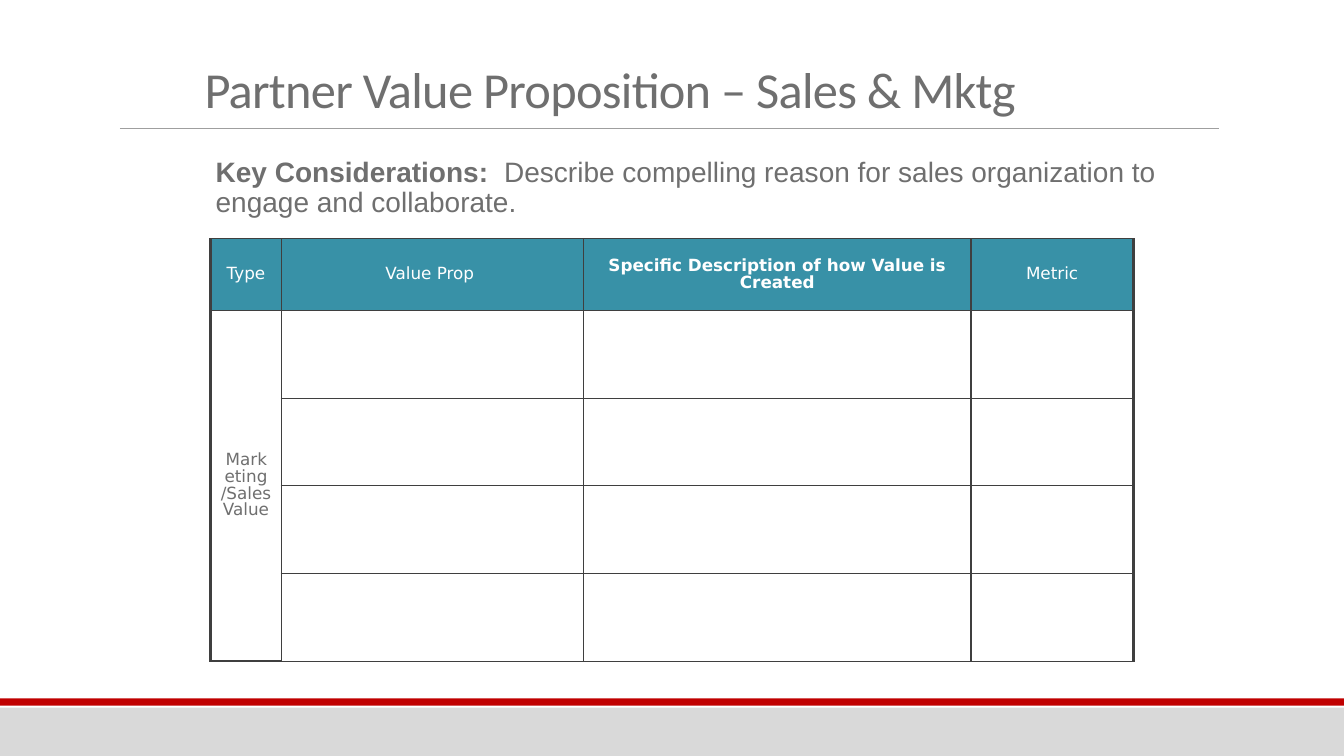
from typing import NamedTuple

from lxml.etree import SubElement as Sub
from pptx import Presentation
from pptx.dml.color import RGBColor as RGB
from pptx.enum.shapes import MSO_CONNECTOR as Link, MSO_SHAPE as Form
from pptx.enum.text import MSO_ANCHOR as Anchor, PP_ALIGN as Align
from pptx.oxml.ns import qn
from pptx.util import Inches, Pt

HUES = {"gray": "6F6F6F", "teal": "3891A7", "white": "FFFFFF", "grid": "3F3F3F",
        "rule": "9F9F9F", "foot": "D9D9D9", "red": "C00000"}
COLS = [0.7, 3, 3.84, 1.61]
ROWS = [0.71] + [0.87] * 4


class Run(NamedTuple):
    text: str
    size: float
    font: str
    hue: str = "gray"
    bold: bool = False
    track: int = 0


class Box(NamedTuple):
    left: float
    top: float
    width: float
    height: float
    anchor: Anchor
    space: float
    runs: list[Run]


class Band(NamedTuple):
    top: float
    height: float
    hue: str


BANDS = [Band(7.02, 0.48, "foot"), Band(6.93, 0.07, "red")]
BOXES = [
    Box(2.04, 1.52, 9.62, 0.7, Anchor.TOP, 0.9, [
        Run("Key Considerations:  ", 20, "Arial", bold=True),
        Run("Describe compelling reason for sales organization to engage and collaborate.",
            20, "Arial")]),
    Box(1.93, 0.53, 9.22, 0.7, Anchor.BOTTOM, 0.85, [
        Run("Partner Value Proposition – Sales & Mktg", 36, "Calibri", track=-50)]),
]
HEADS = [Run(text, 12, "DejaVu Sans", "white", bold) for text, bold in [
    ("Type", False), ("Value Prop ", False),
    ("Specific Description of how Value is Created", True), ("Metric", False)]]
SIDE = Run("Marketing /Sales Value", 12, "DejaVu Sans")


def color(hue: str) -> RGB:
    return RGB.from_string(HUES[hue])


def write(para, runs: list[Run], space: float) -> None:
    para.line_spacing = space
    for item in runs:
        run = para.add_run()
        run.text = item.text
        font = run.font
        font.size, font.name, font.bold = Pt(item.size), item.font, item.bold
        font.color.rgb = color(item.hue)
        if item.track:
            run._r.get_or_add_rPr().set("spc", str(item.track))


def draw_band(slide, band: Band) -> None:
    bar = slide.shapes.add_shape(Form.RECTANGLE, 0, Inches(band.top),
                                 Inches(13.33), Inches(band.height))
    bar.shadow.inherit = False
    bar.fill.solid()
    bar.fill.fore_color.rgb = color(band.hue)
    bar.line.fill.background()


def draw_rule(slide) -> None:
    rule = slide.shapes.add_connector(Link.STRAIGHT, Inches(1.19), Inches(1.27),
                                      Inches(12.09), Inches(1.27))
    rule.line.color.rgb = color("rule")
    rule.line.width = Pt(0.5)
    Sub(rule._element.spPr, qn("a:effectLst"))


def draw_box(slide, box: Box) -> None:
    frame = slide.shapes.add_textbox(Inches(box.left), Inches(box.top),
                                     Inches(box.width), Inches(box.height)).text_frame
    frame.word_wrap = True
    frame.vertical_anchor = box.anchor
    write(frame.paragraphs[0], box.runs, box.space)


def edge(cell, side: str, width: float) -> None:
    """Add one border; call before the cell gets its fill."""
    line = Sub(cell._tc.get_or_add_tcPr(), qn(f"a:ln{side}"), w=str(Pt(width)))
    Sub(Sub(line, qn("a:solidFill")), qn("a:srgbClr"), val=HUES["grid"])


def label(cell, run: Run) -> None:
    cell.vertical_anchor = Anchor.MIDDLE
    para = cell.text_frame.paragraphs[0]
    para.alignment = Align.CENTER
    write(para, [run], 0.85)


def draw_table(slide) -> None:
    table = slide.shapes.add_table(len(ROWS), len(COLS), Inches(2.09), Inches(2.37),
                                   Inches(sum(COLS)), Inches(sum(ROWS))).table
    table.first_row = table.horz_banding = False
    for col, width in zip(table.columns, COLS):
        col.width = Inches(width)
    for row, height in zip(table.rows, ROWS):
        row.height = Inches(height)
    last = len(COLS) - 1
    for y in range(len(ROWS)):
        for x in range(len(COLS)):
            cell = table.cell(y, x)
            edge(cell, "L", 2.25 if x == 0 else 1)
            edge(cell, "R", 2.25 if x == last else 1)
            edge(cell, "T", 1)
            edge(cell, "B", 2.25 if x == 0 and y else 1)
            if y:
                cell.fill.background()
            else:
                cell.fill.solid()
                cell.fill.fore_color.rgb = color("teal")
                label(cell, HEADS[x])
    side = table.cell(1, 0)
    side.merge(table.cell(len(ROWS) - 1, 0))
    side._tc.get_or_add_tcPr().set("vert", "eaVert")
    label(side, SIDE)


def main() -> None:
    deck = Presentation()
    deck.slide_width, deck.slide_height = Inches(13.33), Inches(7.5)
    slide = deck.slides.add_slide(deck.slide_layouts[6])
    for band in BANDS:
        draw_band(slide, band)
    draw_rule(slide)
    draw_table(slide)
    for box in BOXES:
        draw_box(slide, box)
    deck.save("out.pptx")


if __name__ == "__main__":
    main()
